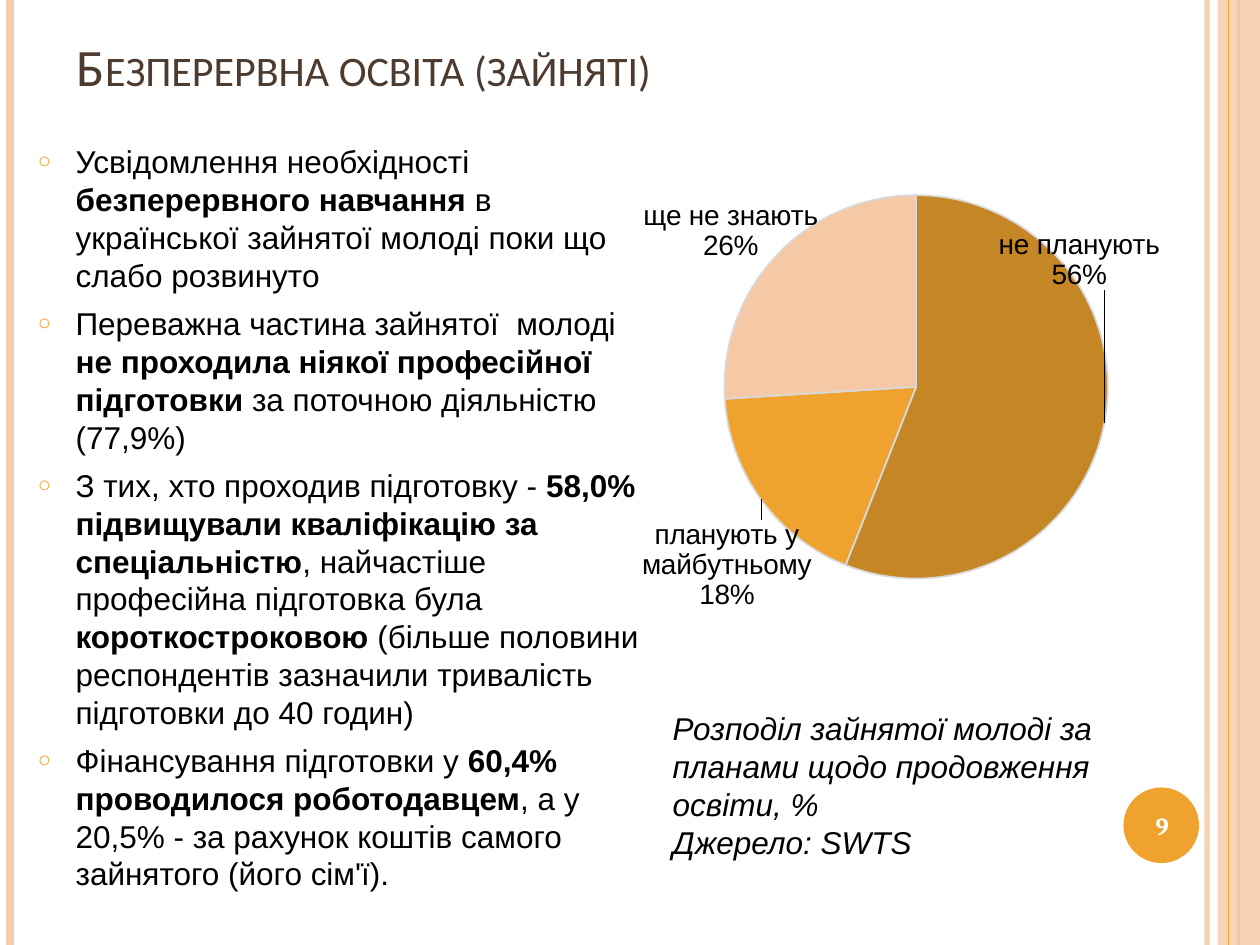
from lxml import etree
from pptx import Presentation
from pptx.chart.data import CategoryChartData
from pptx.dml.color import RGBColor
from pptx.enum.chart import XL_CHART_TYPE
from pptx.enum.shapes import MSO_CONNECTOR, MSO_SHAPE
from pptx.enum.text import MSO_ANCHOR, MSO_AUTO_SIZE, PP_ALIGN
from pptx.oxml import parse_xml
from pptx.oxml.ns import nsdecls, qn
from pptx.util import Pt

PIE = XL_CHART_TYPE.PIE
STRAIGHT = MSO_CONNECTOR.STRAIGHT
RECTANGLE, OVAL = MSO_SHAPE.RECTANGLE, MSO_SHAPE.OVAL
TOP, MIDDLE, BOTTOM = MSO_ANCHOR.TOP, MSO_ANCHOR.MIDDLE, MSO_ANCHOR.BOTTOM
LEFT, CENTER = PP_ALIGN.LEFT, PP_ALIGN.CENTER
NO_AUTOFIT = MSO_AUTO_SIZE.NONE

PEACH = RGBColor(0xF6, 0xCE, 0xAD)
ORANGE = RGBColor(0xF0, 0xA2, 0x2E)
OCHRE = RGBColor(0xC5, 0x86, 0x25)
PALE = RGBColor(0xF5, 0xC9, 0xA5)
GREY = RGBColor(0xD9, 0xD9, 0xD9)
BROWN = RGBColor(0x4E, 0x3B, 0x30)
BLACK = RGBColor(0, 0, 0)
WHITE = RGBColor(0xFF, 0xFF, 0xFF)

WIDTH, HEIGHT = 720, 540

# x, colour, line width, opacity in percent
LINES_BELOW_BAND = [(689.8, PEACH, 3, 93), (5.8, PEACH, 4.5, 100), (707.8, ORANGE, 1.5, 100)]
LINE_ON_BAND = (702, ORANGE, 0.75, 100)

# Each bullet is a list of (text, bold) runs
BULLETS = [
    [("Усвідомлення необхідності ", False), ("безперервного навчання ", True),
     ("в української зайнятої молоді поки що слабо розвинуто", False)],
    [("Переважна частина зайнятої  молоді ", False),
     ("не проходила ніякої професійної підготовки ", True),
     ("за поточною діяльністю (77,9%)", False)],
    [("З тих, хто проходив підготовку - ", False),
     ("58,0% підвищували кваліфікацію за спеціальністю", True),
     (", найчастіше професійна підготовка була ", False), ("короткостроковою", True),
     (" (більше половини респондентів зазначили тривалість підготовки до 40 годин)", False)],
    [("Фінансування підготовки у ", False), ("60,4% проводилося роботодавцем", True),
     (", а у 20,5% - за рахунок коштів самого зайнятого (його сім'ї).", False)],
]
CAPTION = ["Розподіл зайнятої молоді за планами щодо продовження освіти, %", "Джерело: SWTS"]

# category, percent, colour, label shift as a share of the chart's size
SLICES = [
    ("не планують", 56, OCHRE, (-0.12, -0.37)),
    ("планують у майбутньому", 18, ORANGE, (0.06, 0.03)),
    ("ще не знають", 26, PALE, (0.05, 0.02)),
]


def place(shape, left, top, width, height):
    shape.left, shape.top = Pt(left), Pt(top)
    shape.width, shape.height = Pt(width), Pt(height)


def add_run(paragraph, text, size, color, name="Arial", bold=False, italic=False):
    run = paragraph.add_run()
    run.text = text
    font = run.font
    font.size, font.name, font.bold, font.italic = Pt(size), name, bold, italic
    font.color.rgb = color
    return run


def set_opacity(fill_parent, percent):
    color = fill_parent.find(".//" + qn("a:srgbClr"))
    etree.SubElement(color, qn("a:alpha")).set("val", str(percent * 1000))


def add_vertical_line(slide, x, color, width, opacity):
    line = slide.shapes.add_connector(STRAIGHT, Pt(x), 0, Pt(x), Pt(HEIGHT))
    line.line.color.rgb = color
    line.line.width = Pt(width)
    properties = line._element.spPr
    if opacity < 100:
        set_opacity(properties, opacity)
    etree.SubElement(properties, qn("a:effectLst"))


def add_plain_shape(slide, kind, bounds, color):
    shape = slide.shapes.add_shape(kind, *map(Pt, bounds))
    shape.shadow.inherit = False
    shape.fill.solid()
    shape.fill.fore_color.rgb = color
    shape.line.fill.background()
    return shape


def add_text_box(slide, bounds, anchor):
    frame = slide.shapes.add_textbox(*map(Pt, bounds)).text_frame
    frame.word_wrap = True
    frame.vertical_anchor = anchor
    return frame


def add_decoration(slide):
    for line in LINES_BELOW_BAND:
        add_vertical_line(slide, *line)
    band = add_plain_shape(slide, RECTANGLE, (696, 0, WIDTH - 696, HEIGHT), PEACH)
    set_opacity(band._element.spPr, 87)
    add_vertical_line(slide, *LINE_ON_BAND)
    add_plain_shape(slide, OVAL, (642, 450, 43.2, 43.2), ORANGE)


def fill_title(title):
    place(title, 36.7, 9.4, 588, 49.7)
    frame = title.text_frame
    frame.auto_size = NO_AUTOFIT
    frame.vertical_anchor = BOTTOM
    paragraph = frame.paragraphs[0]
    paragraph.alignment = LEFT
    run = add_run(paragraph, "Безперервна освіта (зайняті)", 30, BROWN, "Calibri")
    run.font._element.set("cap", "small")


def set_bullet(paragraph):
    properties = paragraph._p.get_or_add_pPr()
    properties.set("marL", str(Pt(21.6)))
    properties.set("indent", str(-Pt(21.6)))
    color = etree.SubElement(properties, qn("a:buClr"))
    etree.SubElement(color, qn("a:srgbClr")).set("val", str(ORANGE))
    etree.SubElement(properties, qn("a:buSzPct")).set("val", "70000")
    etree.SubElement(properties, qn("a:buChar")).set("char", "○")


def fill_body(body):
    place(body, 14.4, 77.8, 362.9, 260)
    frame = body.text_frame
    frame.auto_size = NO_AUTOFIT
    frame.vertical_anchor = TOP
    for index, runs in enumerate(BULLETS):
        paragraph = frame.add_paragraph() if index else frame.paragraphs[0]
        paragraph.space_before = Pt(6)
        set_bullet(paragraph)
        for text, bold in runs:
            add_run(paragraph, text, 18, BLACK, bold=bold)


def manual_layout(x, y, extra=""):
    return (f'<c:layout {nsdecls("c")}><c:manualLayout>{extra}'
            f'<c:x val="{x}"/><c:y val="{y}"/>')


def label_xml():
    shows = ('<c:dLblPos val="outEnd"/><c:showLegendKey val="0"/><c:showVal val="0"/>'
             '<c:showCatName val="1"/><c:showSerName val="0"/><c:showPercent val="1"/>'
             '<c:showBubbleSize val="0"/><c:separator>\n</c:separator>')
    labels = "".join(
        f'<c:dLbl><c:idx val="{index}"/>{manual_layout(*shift)}'
        f'</c:manualLayout></c:layout>{shows}</c:dLbl>'
        for index, (_, _, _, shift) in enumerate(SLICES))
    return (f'<c:dLbls {nsdecls("c")}>{labels}{shows}'
            '<c:showLeaderLines val="1"/></c:dLbls>')


def add_pie(slide):
    data = CategoryChartData()
    data.categories = [name for name, _, _, _ in SLICES]
    data.add_series("Series 1", [value for _, value, _, _ in SLICES])
    bounds = (235.4, 60.5, 538.6, 300.2)
    chart = slide.shapes.add_chart(PIE, *map(Pt, bounds), data).chart
    chart.has_legend = False
    chart.has_title = False
    chart.font.size, chart.font.name = Pt(16), "Arial"
    chart.font.color.rgb = BLACK
    plot = chart.plots[0]
    plot.vary_by_categories = True
    series = plot.series[0]
    for index, (_, _, color, _) in enumerate(SLICES):
        slice_format = series.points[index].format
        slice_format.fill.solid()
        slice_format.fill.fore_color.rgb = color
        slice_format.line.color.rgb = GREY
        slice_format.line.width = Pt(1)

    # Labels and a fixed plot area
    series._element.find(qn("c:cat")).addprevious(parse_xml(label_xml()))
    area = chart._chartSpace.chart.plotArea
    for layout in area.findall(qn("c:layout")):
        area.remove(layout)
    modes = ('<c:layoutTarget val="inner"/><c:xMode val="edge"/><c:yMode val="edge"/>')
    area.insert(0, parse_xml(manual_layout(0.18, 0.17, modes)
                             + '<c:w val="0.71"/><c:h val="0.73"/>'
                             '</c:manualLayout></c:layout>'))


def main():
    presentation = Presentation()
    presentation.slide_width, presentation.slide_height = Pt(WIDTH), Pt(HEIGHT)
    slide = presentation.slides.add_slide(presentation.slide_layouts[1])

    add_decoration(slide)
    fill_title(slide.shapes.title)

    # Slide number on the disc
    number = add_text_box(slide, (640, 451.4, 48.2, 41), MIDDLE).paragraphs[0]
    number.alignment = CENTER
    add_run(number, "9", 14, WHITE, "Cambria", bold=True)

    # Chart caption
    caption = add_text_box(slide, (377.3, 401.8, 283.7, 116.6), TOP)
    for index, text in enumerate(CAPTION):
        paragraph = caption.add_paragraph() if index else caption.paragraphs[0]
        add_run(paragraph, text, 18, BLACK, italic=True)

    fill_body(slide.placeholders[1])
    add_pie(slide)
    presentation.save("out.pptx")


if __name__ == "__main__":
    main()
